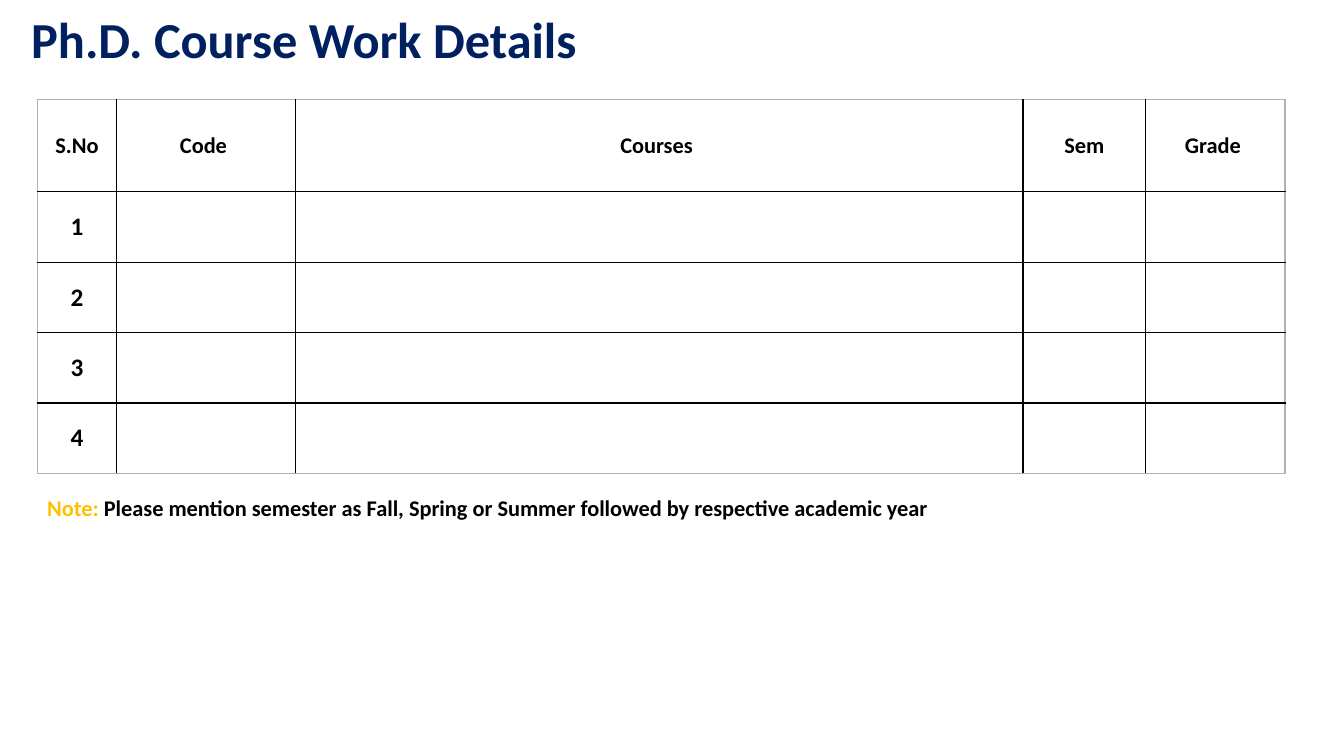
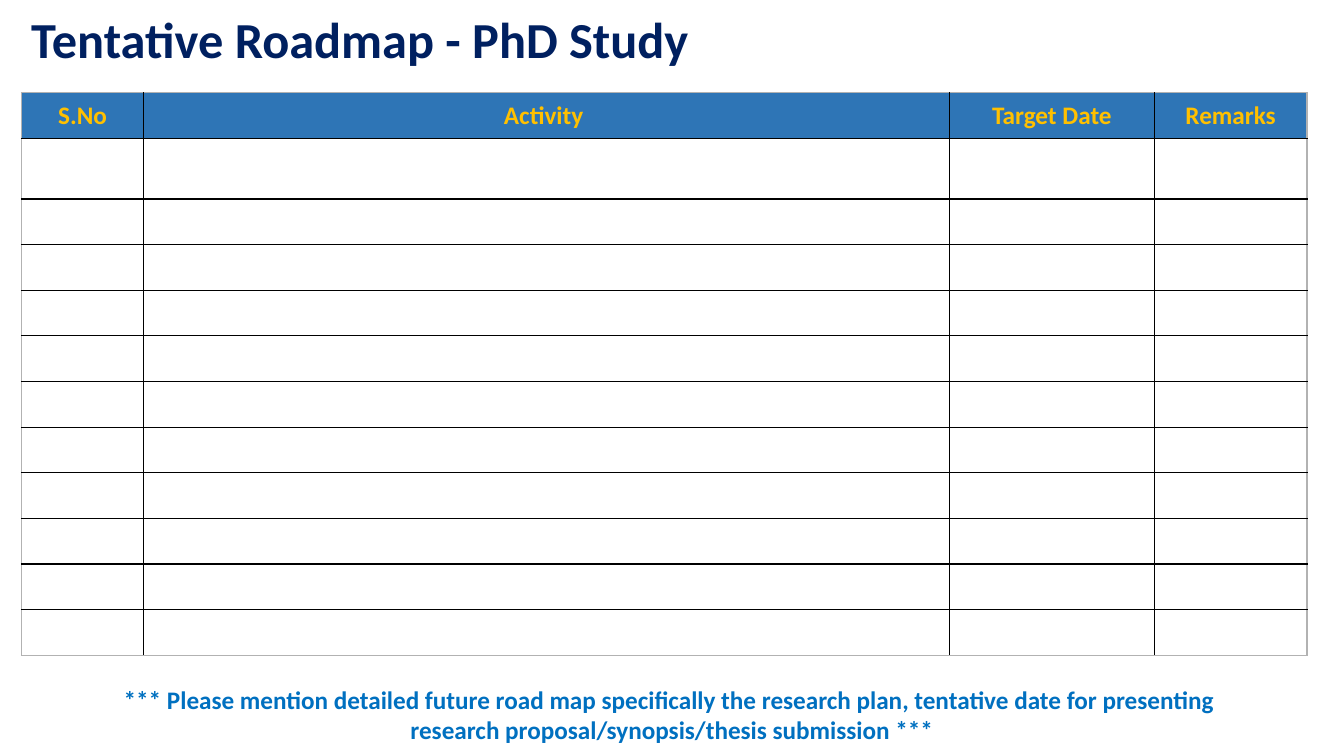
"""Build the course work and roadmap slides of a Ph.D. progress presentation."""
import lxml.etree
import pptx
import pptx.dml.color
import pptx.enum.text
import pptx.oxml.ns
import pptx.util

Pt = pptx.util.Pt
RGBColor = pptx.dml.color.RGBColor
PP_ALIGN = pptx.enum.text.PP_ALIGN
MSO_ANCHOR = pptx.enum.text.MSO_ANCHOR
MSO_AUTO_SIZE = pptx.enum.text.MSO_AUTO_SIZE
qn = pptx.oxml.ns.qn

NAVY = RGBColor(0x00, 0x20, 0x60)
GOLD = RGBColor(0xFF, 0xC0, 0x00)
HEADER_BLUE = RGBColor(0x2E, 0x75, 0xB6)
NOTE_BLUE = RGBColor(0x00, 0x70, 0xC0)
BLACK = RGBColor(0x00, 0x00, 0x00)
WHITE = RGBColor(0xFF, 0xFF, 0xFF)
EDGE_GRAY = RGBColor(0xB2, 0xB2, 0xB2)
FONT = "Calibri"
TITLE_ONLY = 5

SLIDES = [
    {
        "title": "Ph.D. Course Work Details",
        "table_at": (26.6, 71.3),
        "columns": [56.9, 127.4, 519.8, 87.8, 99.4],
        "rows": [65.7] + [50.3] * 4,
        "header": ["S.No", "Code ", "Courses ", "Sem", "Grade "],
        "header_style": (16, BLACK, WHITE),
        "numbered": True,
        "note_at": (26.6, 349.2, 890, 26.6),
        "note": [("Note:", GOLD),
                 (" Please mention semester as Fall, Spring or Summer followed by "
                  "respective academic year", BLACK)],
        "note_style": (16, PP_ALIGN.LEFT),
    },
    {
        "title": "Tentative Roadmap - PhD Study",
        "table_at": (15.4, 66.3),
        "columns": [87.2, 575.6, 146.4, 109],
        "rows": [32.6, 43.2] + [32.6] * 10,
        "header": ["S.No", "Activity ", "Target Date", "Remarks"],
        "header_style": (18, GOLD, HEADER_BLUE),
        "numbered": False,
        "note_at": (0, 485.3, 960, 51),
        "note": [("*** Please mention detailed future road map specifically the research "
                  "plan, tentative date for presenting ", NOTE_BLUE),
                 ("research proposal/synopsis/thesis submission ***", NOTE_BLUE)],
        "note_style": (18, PP_ALIGN.CENTER),
    },
]


def style_font(font, size, color):
    font.name = FONT
    font.size = Pt(size)
    font.bold = True
    font.color.rgb = color


def set_borders(cell, edge_colors):
    properties = cell._tc.get_or_add_tcPr()
    for position, (tag, color) in enumerate(edge_colors.items()):
        line = lxml.etree.Element(qn(tag), w=str(Pt(1)))
        fill = lxml.etree.SubElement(line, qn("a:solidFill"))
        lxml.etree.SubElement(fill, qn("a:srgbClr"), val=str(color))
        properties.insert(position, line)


presentation = pptx.Presentation()
presentation.slide_width = Pt(960)
presentation.slide_height = Pt(540)

for content in SLIDES:
    slide = presentation.slides.add_slide(presentation.slide_layouts[TITLE_ONLY])

    title = slide.shapes.title
    title.left, title.top, title.width, title.height = Pt(15.1), Pt(12.2), Pt(839), Pt(36)
    title.text_frame.text = content["title"]
    title.text_frame.auto_size = MSO_AUTO_SIZE.NONE
    title.text_frame.vertical_anchor = MSO_ANCHOR.MIDDLE
    paragraph = title.text_frame.paragraphs[0]
    paragraph.alignment = PP_ALIGN.LEFT
    paragraph.line_spacing = 0.9
    style_font(paragraph.runs[0].font, 36, NAVY)

    columns, rows = content["columns"], content["rows"]
    left, top = content["table_at"]
    table = slide.shapes.add_table(len(rows), len(columns), Pt(left), Pt(top),
                                   Pt(sum(columns)), Pt(sum(rows))).table
    table.first_row = False
    table.horz_banding = False
    for column, width in zip(table.columns, columns):
        column.width = Pt(width)
    for row, height in zip(table.rows, rows):
        row.height = Pt(height)

    header_size, header_color, header_fill = content["header_style"]
    last_row, last_column = len(rows) - 1, len(columns) - 1
    for row_index in range(len(rows)):
        for column_index, heading in enumerate(content["header"]):
            cell = table.cell(row_index, column_index)
            cell.vertical_anchor = MSO_ANCHOR.MIDDLE
            cell.fill.solid()
            cell.fill.fore_color.rgb = WHITE if row_index else header_fill
            set_borders(cell, {
                "a:lnL": BLACK if column_index else EDGE_GRAY,
                "a:lnR": BLACK if column_index < last_column else EDGE_GRAY,
                "a:lnT": BLACK if row_index else EDGE_GRAY,
                "a:lnB": BLACK if row_index < last_row else EDGE_GRAY,
            })
            if row_index == 0:
                text, size, color = heading, header_size, header_color
            elif content["numbered"] and column_index == 0:
                text, size, color = str(row_index), 18, BLACK
            else:
                continue
            paragraph = cell.text_frame.paragraphs[0]
            paragraph.text = text
            paragraph.alignment = PP_ALIGN.CENTER
            style_font(paragraph.runs[0].font, size, color)

    note_size, note_alignment = content["note_style"]
    note = slide.shapes.add_textbox(*(Pt(length) for length in content["note_at"]))
    note.text_frame.word_wrap = True
    paragraph = note.text_frame.paragraphs[0]
    paragraph.alignment = note_alignment
    for index, (text, color) in enumerate(content["note"]):
        if index and note_alignment == PP_ALIGN.CENTER:
            paragraph.add_line_break()
        run = paragraph.add_run()
        run.text = text
        style_font(run.font, note_size, color)

presentation.save("out.pptx")
